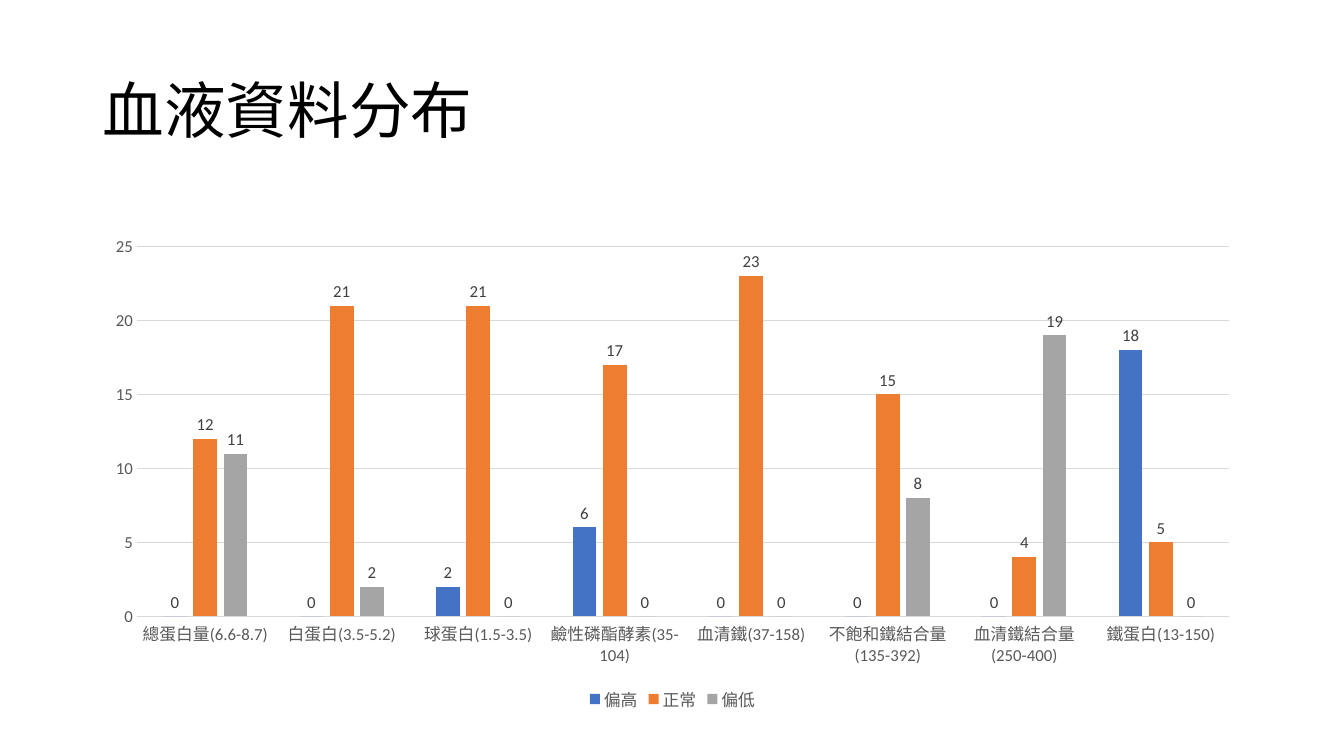
"""Build a slide with a clustered column chart of blood test results."""
import dataclasses

import pptx
import pptx.chart.data
import pptx.dml.color
import pptx.enum.chart
import pptx.enum.text
import pptx.util

Inches = pptx.util.Inches
Pt = pptx.util.Pt
FONT = "Calibri"
GRID = "D9D9D9"
AXIS_TEXT = "595959"
LABEL_TEXT = "404040"


@dataclasses.dataclass(frozen=True)
class Level:
    name: str
    counts: tuple[int, ...]
    color: str


TESTS = (
    "總蛋白量(6.6-8.7)",
    "白蛋白(3.5-5.2)",
    "球蛋白(1.5-3.5)",
    "鹼性磷酯酵素(35-104)",
    "血清鐵(37-158)",
    "不飽和鐵結合量(135-392)",
    "血清鐵結合量(250-400)",
    "鐵蛋白(13-150)",
)
LEVELS = (
    Level("偏高", (0, 0, 2, 6, 0, 0, 0, 18), "4472C4"),
    Level("正常", (12, 21, 21, 17, 23, 15, 4, 5), "ED7D31"),
    Level("偏低", (11, 2, 0, 0, 0, 8, 19, 0), "A5A5A5"),
)


def rgb(color: str) -> pptx.dml.color.RGBColor:
    return pptx.dml.color.RGBColor.from_string(color)


def style_font(font, size: float, color: str) -> None:
    font.name = FONT
    font.size = Pt(size)
    font.bold = False
    font.color.rgb = rgb(color)


def style_line(line) -> None:
    line.color.rgb = rgb(GRID)
    line.width = Pt(0.75)


def add_title(s, text: str) -> None:
    tb = s.shapes.add_textbox(Inches(0.92), Inches(0.4), Inches(11.5), Inches(1.45))
    tf = tb.text_frame
    tf.word_wrap = True
    tf.vertical_anchor = pptx.enum.text.MSO_ANCHOR.MIDDLE
    tf.text = text
    p = tf.paragraphs[0]
    p.line_spacing = 0.9
    style_font(p.runs[0].font, 44, "000000")


def style_axes(chart) -> None:
    for axis in (chart.category_axis, chart.value_axis):
        axis.major_tick_mark = pptx.enum.chart.XL_TICK_MARK.NONE
        axis.minor_tick_mark = pptx.enum.chart.XL_TICK_MARK.NONE
        style_font(axis.tick_labels.font, 12, AXIS_TEXT)
    style_line(chart.category_axis.format.line)
    chart.value_axis.format.line.fill.background()
    chart.value_axis.has_major_gridlines = True
    style_line(chart.value_axis.major_gridlines.format.line)


def style_series(series, level: Level) -> None:
    series.invert_if_negative = False
    series.format.fill.solid()
    series.format.fill.fore_color.rgb = rgb(level.color)
    labels = series.data_labels
    labels.show_value = True
    labels.position = pptx.enum.chart.XL_LABEL_POSITION.OUTSIDE_END
    style_font(labels.font, 12, LABEL_TEXT)


def add_blood_chart(s) -> None:
    data = pptx.chart.data.CategoryChartData()
    data.categories = TESTS
    for level in LEVELS:
        data.add_series(level.name, level.counts)
    chart = s.shapes.add_chart(
        pptx.enum.chart.XL_CHART_TYPE.COLUMN_CLUSTERED,
        Inches(0.92), Inches(2.25), Inches(11.5), Inches(4.85), data,
    ).chart
    style_font(chart.font, 10, "000000")
    chart.has_title = False
    chart.has_legend = True
    chart.legend.position = pptx.enum.chart.XL_LEGEND_POSITION.BOTTOM
    chart.legend.include_in_layout = False
    style_font(chart.legend.font, 12, AXIS_TEXT)
    style_axes(chart)
    plot = chart.plots[0]
    plot.vary_by_categories = False
    plot.gap_width = 219
    plot.overlap = -27
    for series, level in zip(plot.series, LEVELS):
        style_series(series, level)


def main() -> None:
    prs = pptx.Presentation()
    prs.slide_width = Inches(13.33)
    prs.slide_height = Inches(7.5)
    s = prs.slides.add_slide(prs.slide_layouts[6])
    add_blood_chart(s)
    add_title(s, "血液資料分布")
    prs.save("out.pptx")


if __name__ == "__main__":
    main()
